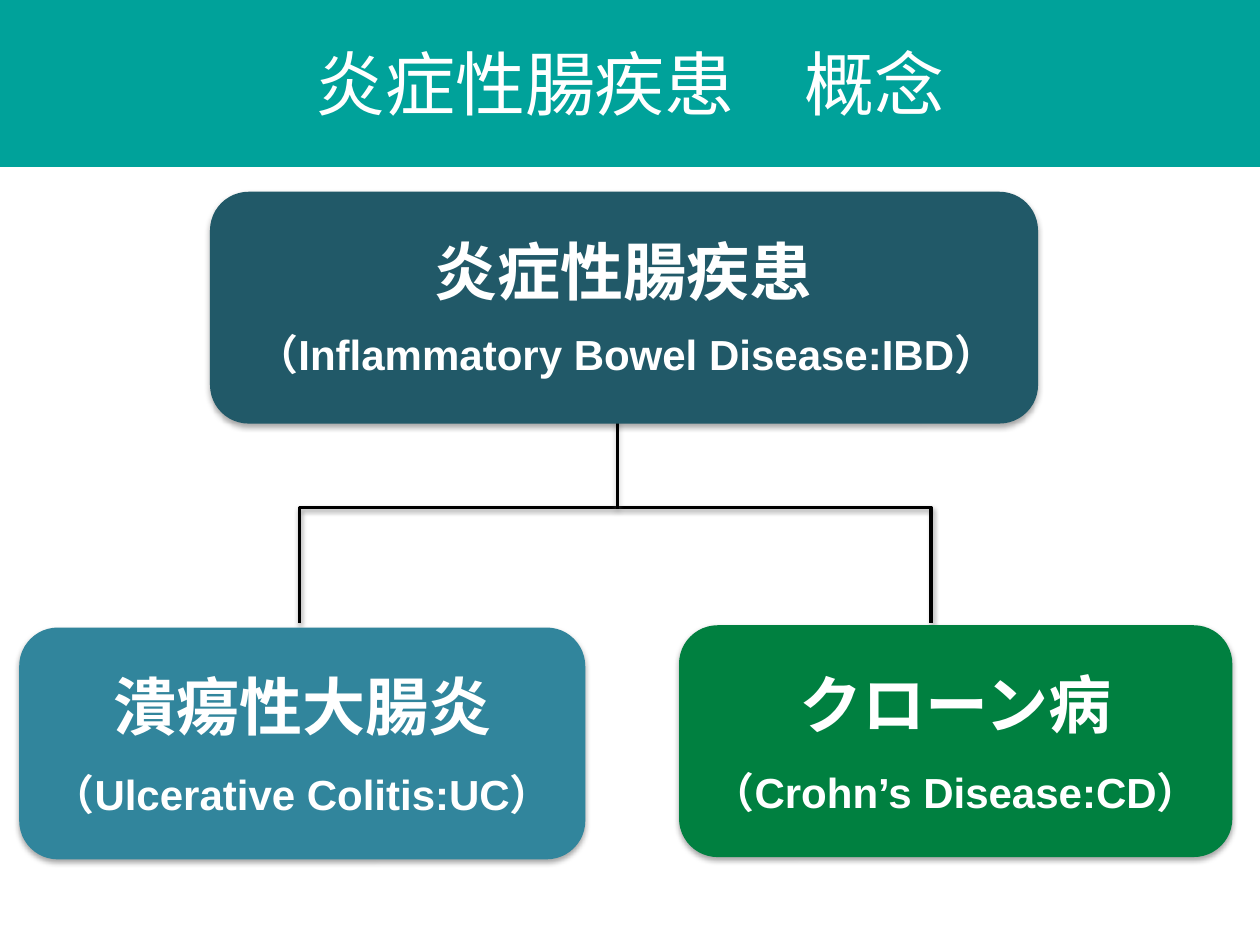
from lxml.etree import SubElement
from pptx import Presentation
from pptx.dml.color import RGBColor
from pptx.enum.shapes import MSO_CONNECTOR, MSO_SHAPE
from pptx.enum.text import MSO_ANCHOR, PP_ALIGN
from pptx.oxml.ns import qn
from pptx.util import Pt

WHITE, BLACK, TEAL = "FFFFFF", "000000", "00A29A"
LATIN, JAPANESE = "Arial", "Noto Sans CJK JP"
BOX_H = 132.5


def rgb(hex_color):
    return RGBColor.from_string(hex_color)


def add_shadow(sp, color, alpha, dist):
    """Give a shape a soft shadow straight below it."""
    effects = SubElement(sp._element.spPr, qn("a:effectLst"))
    shadow = SubElement(effects, qn("a:outerShdw"), blurRad=str(Pt(3.1)),
                        dist=str(Pt(dist)), dir="5400000", rotWithShape="0")
    clr = SubElement(shadow, qn("a:srgbClr"), val=color)
    SubElement(clr, qn("a:alpha"), val=str(alpha * 1000))


def set_line(sp, color):
    sp.line.color.rgb = rgb(color)
    sp.line.width = Pt(2)


def add_run(p, text, size, font=LATIN, bold=False):
    r = p.add_run()
    r.text = text
    r.font.size = Pt(size)
    r.font.name = font
    r.font.bold = bold
    r.font.color.rgb = rgb(WHITE)
    SubElement(r.font._element, qn("a:ea"), typeface=JAPANESE)


def add_title(s, text):
    sp = s.shapes.title
    sp.left, sp.top, sp.width, sp.height = Pt(0), Pt(0), Pt(720), Pt(94.5)
    sp.fill.solid()
    sp.fill.fore_color.rgb = rgb(TEAL)
    set_line(sp, TEAL)
    tf = sp.text_frame
    tf.vertical_anchor = MSO_ANCHOR.MIDDLE
    p = tf.paragraphs[0]
    p.alignment = PP_ALIGN.CENTER
    add_run(p, text, 40, JAPANESE)


def add_box(s, left, top, width, color, lines):
    """Rounded box; each line is a list of (text, size, font) runs."""
    sp = s.shapes.add_shape(MSO_SHAPE.ROUNDED_RECTANGLE,
                            Pt(left), Pt(top), Pt(width), Pt(BOX_H))
    sp.fill.solid()
    sp.fill.fore_color.rgb = rgb(color)
    sp.line.fill.background()
    add_shadow(sp, BLACK, 35, 1.8)
    tf = sp.text_frame
    tf.word_wrap = False
    tf.vertical_anchor = MSO_ANCHOR.MIDDLE
    for i, runs in enumerate(lines):
        p = tf.add_paragraph() if i else tf.paragraphs[0]
        p.alignment = PP_ALIGN.CENTER
        p.line_spacing = Pt(43)
        for text, size, font in runs:
            add_run(p, text, size, font, bold=True)


def add_bracket(s, left, top, right, bottom):
    builder = s.shapes.build_freeform(left, bottom, scale=Pt(1))
    builder.add_line_segments([(left, top), (right, top), (right, bottom)],
                              close=False)
    sp = builder.convert_to_shape()
    sp.fill.background()
    set_line(sp, BLACK)
    add_shadow(sp, BLACK, 38, 1.6)


def add_stem(s, x, top, bottom):
    line = s.shapes.add_connector(MSO_CONNECTOR.STRAIGHT,
                                  Pt(x), Pt(top), Pt(x), Pt(bottom))
    set_line(line, BLACK)
    add_shadow(line, "808080", 38, 1.6)


def main():
    prs = Presentation()
    prs.slide_width, prs.slide_height = Pt(720), Pt(540)
    s = prs.slides.add_slide(prs.slide_layouts[5])

    # Branch lines
    add_bracket(s, 171.2, 290.3, 531.6, 356.2)
    add_stem(s, 352.8, 223.2, 290.9)

    # The two diseases, then the parent group
    add_box(s, 388, 357.3, 316.2, "008040",
            [[("クローン病", 36, JAPANESE)],
             [("（Crohn’s Disease:CD）", 24, LATIN)]])
    add_box(s, 11, 358.6, 323.5, "31859C",
            [[("潰瘍性大腸炎", 36, LATIN)],
             [("（Ulcerative Colitis:UC）", 24, LATIN)]])
    add_box(s, 120, 109.6, 473.2, "215968",
            [[("炎症性腸疾患", 36, LATIN)],
             [(" ", 36, LATIN),
              ("（Inflammatory Bowel Disease:IBD） ", 24, LATIN)]])

    # Title banner
    add_title(s, "炎症性腸疾患　概念")
    prs.save("out.pptx")


if __name__ == "__main__":
    main()
